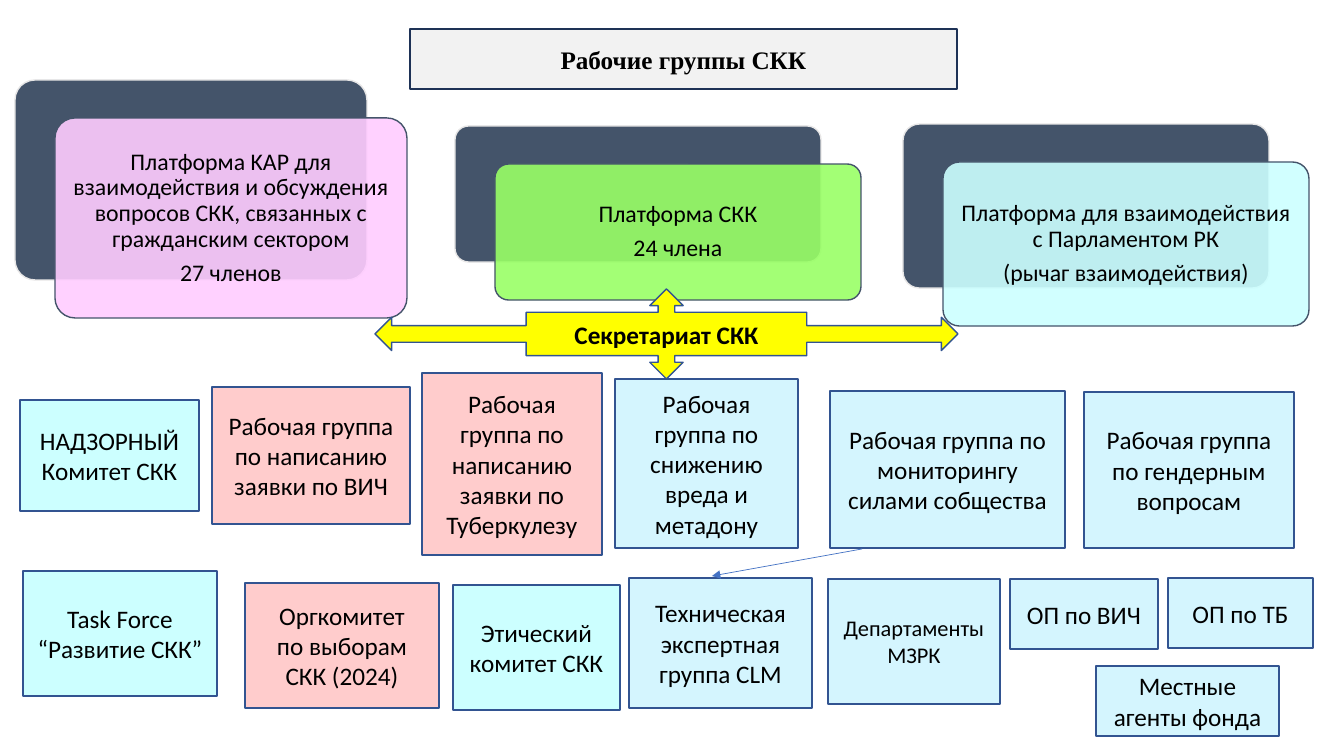
from lxml.etree import SubElement
from pptx import Presentation
from pptx.dml.color import RGBColor
from pptx.enum.shapes import MSO_CONNECTOR, MSO_SHAPE
from pptx.enum.text import MSO_ANCHOR, PP_ALIGN
from pptx.oxml.ns import qn
from pptx.util import Emu, Pt

BLACK = RGBColor(0x00, 0x00, 0x00)
SLATE = RGBColor(0x44, 0x54, 0x6A)
PALE_EDGE = RGBColor(0xE7, 0xE6, 0xE6)
BLUE_EDGE = RGBColor(0x32, 0x54, 0x91)
NAVY_EDGE = RGBColor(0x1E, 0x32, 0x56)
ARROW_BLUE = RGBColor(0x44, 0x72, 0xC4)
GREY = RGBColor(0xF2, 0xF2, 0xF2)
LILAC = RGBColor(0xFF, 0xCC, 0xFF)
GREEN = RGBColor(0x99, 0xFF, 0x66)
AQUA = RGBColor(0xCC, 0xFF, 0xFF)
PINK = RGBColor(0xFF, 0xCC, 0xCC)
SKY = RGBColor(0xD4, 0xF5, 0xFE)
YELLOW = RGBColor(0xFF, 0xFF, 0x00)

EMU_PER_PX = 914400 / 100.8
SLIDE_SIZE = (1344, 756)

TITLE = ("Рабочие группы СКК", (410, 29, 547, 60))
SECRETARIAT = ("Секретариат СКК", (375, 289, 583, 90))

# lines, (left, top, width, height) of the back card, colour of the front card
PLATFORMS = [
    (["Платформа KAP для взаимодействия и обсуждения вопросов СКК, "
      "связанных с гражданским сектором", "27 членов"],
     (15, 80, 352, 200), LILAC),
    (["Платформа СКК", "24 члена"], (455, 126, 366, 136), GREEN),
    (["Платформа для взаимодействия с Парламентом РК",
      "(рычаг взаимодействия)"], (903, 124, 366, 164), AQUA),
]
FRONT_SHIFT = (40, 38)

# lines, (left, top, width, height), colour, text size
GROUPS = [
    (["НАДЗОРНЫЙ Комитет СКК"], (20, 400, 179, 111), AQUA, 18),
    (["Рабочая группа по написанию заявки по ВИЧ"], (212, 387, 198, 137), PINK, 18),
    (["Рабочая группа по написанию заявки по Туберкулезу"],
     (422, 373, 180, 182), PINK, 18),
    (["Рабочая группа по снижению вреда и метадону"], (615, 379, 183, 169), SKY, 18),
    (["Рабочая группа по мониторингу силами собщества"],
     (830, 391, 235, 157), SKY, 18),
    (["Рабочая группа по гендерным вопросам"], (1084, 392, 210, 156), SKY, 18),
    (["Task Force", "“Развитие СКК”"], (23, 571, 194, 125), AQUA, 18),
    (["Оргкомитет", "по выборам СКК (2024)"], (245, 583, 194, 125), PINK, 18),
    (["Этический комитет СКК"], (453, 585, 167, 125), AQUA, 18),
    (["Техническая экспертная группа CLM"], (629, 578, 183, 130), SKY, 18),
    (["Департаменты МЗРК"], (828, 579, 172, 125), SKY, 16),
    (["ОП по ВИЧ"], (1010, 579, 148, 70), SKY, 18),
    (["ОП по ТБ"], (1168, 578, 145, 70), SKY, 18),
    (["Местные агенты фонда"], (1096, 666, 183, 70), SKY, 18),
]
CLM_ARROW = ((862, 549), (712, 576))


def px(*lengths):
    return [Emu(round(length * EMU_PER_PX)) for length in lengths]


def write(shape, lines, size=18, font="Calibri", bold=False,
          line_spacing=None, space_after=None, inset=None):
    frame = shape.text_frame
    frame.word_wrap = True
    frame.vertical_anchor = MSO_ANCHOR.MIDDLE
    if inset is not None:
        frame.margin_left = frame.margin_right = inset
        frame.margin_top = frame.margin_bottom = inset
    for index, line in enumerate(lines):
        paragraph = frame.add_paragraph() if index else frame.paragraphs[0]
        paragraph.alignment = PP_ALIGN.CENTER
        paragraph.line_spacing = line_spacing
        paragraph.space_after = space_after
        run = paragraph.add_run()
        run.text = line
        run.font.size = Pt(size)
        run.font.name = font
        run.font.bold = bold
        run.font.color.rgb = BLACK


def paint(shape, fill, edge):
    shape.fill.solid()
    shape.fill.fore_color.rgb = fill
    shape.line.color.rgb = edge
    shape.line.width = Pt(1)


def add_box(slide, kind, place, fill, edge):
    box = slide.shapes.add_shape(kind, *px(*place))
    box.shadow.inherit = False
    paint(box, fill, edge)
    return box


def add_title(slide):
    text, place = TITLE
    title = slide.shapes.title
    title.left, title.top, title.width, title.height = px(*place)
    outline = SubElement(title._element.spPr, qn("a:prstGeom"), prst="roundRect")
    SubElement(outline, qn("a:avLst"))
    paint(title, GREY, NAVY_EDGE)
    write(title, [text], font="Times New Roman", bold=True)


def add_platform(slide, lines, place, colour):
    left, top, width, height = place
    front_place = (left + FRONT_SHIFT[0], top + FRONT_SHIFT[1], width, height)
    back = add_box(slide, MSO_SHAPE.ROUNDED_RECTANGLE, place, SLATE, PALE_EDGE)
    front = add_box(slide, MSO_SHAPE.ROUNDED_RECTANGLE, front_place, colour, SLATE)
    back.adjustments[0] = front.adjustments[0] = 0.1
    fill_colour = front._element.spPr.find(qn("a:solidFill"))[0]
    SubElement(fill_colour, qn("a:alpha"), val="90000")
    write(front, lines, size=17, line_spacing=0.9, space_after=Pt(6), inset=Pt(5))


def add_arrow(slide, start, end):
    arrow = slide.shapes.add_connector(MSO_CONNECTOR.STRAIGHT, *px(*start, *end))
    arrow.line.color.rgb = ARROW_BLUE
    arrow.line.width = Pt(0.5)
    SubElement(arrow.line._get_or_add_ln(), qn("a:tailEnd"), type="triangle")
    SubElement(arrow._element.spPr, qn("a:effectLst"))


def main():
    deck = Presentation()
    deck.slide_width, deck.slide_height = px(*SLIDE_SIZE)
    slide = deck.slides.add_slide(deck.slide_layouts.get_by_name("Title Only"))

    add_title(slide)
    for lines, place, colour in PLATFORMS:
        add_platform(slide, lines, place, colour)
    for lines, place, colour, size in GROUPS:
        group = add_box(slide, MSO_SHAPE.RECTANGLE, place, colour, BLUE_EDGE)
        write(group, lines, size=size)
    add_arrow(slide, *CLM_ARROW)

    text, place = SECRETARIAT
    secretariat = add_box(slide, MSO_SHAPE.QUAD_ARROW_CALLOUT, place, YELLOW, BLUE_EDGE)
    write(secretariat, [text], bold=True)

    deck.save("out.pptx")


if __name__ == "__main__":
    main()
